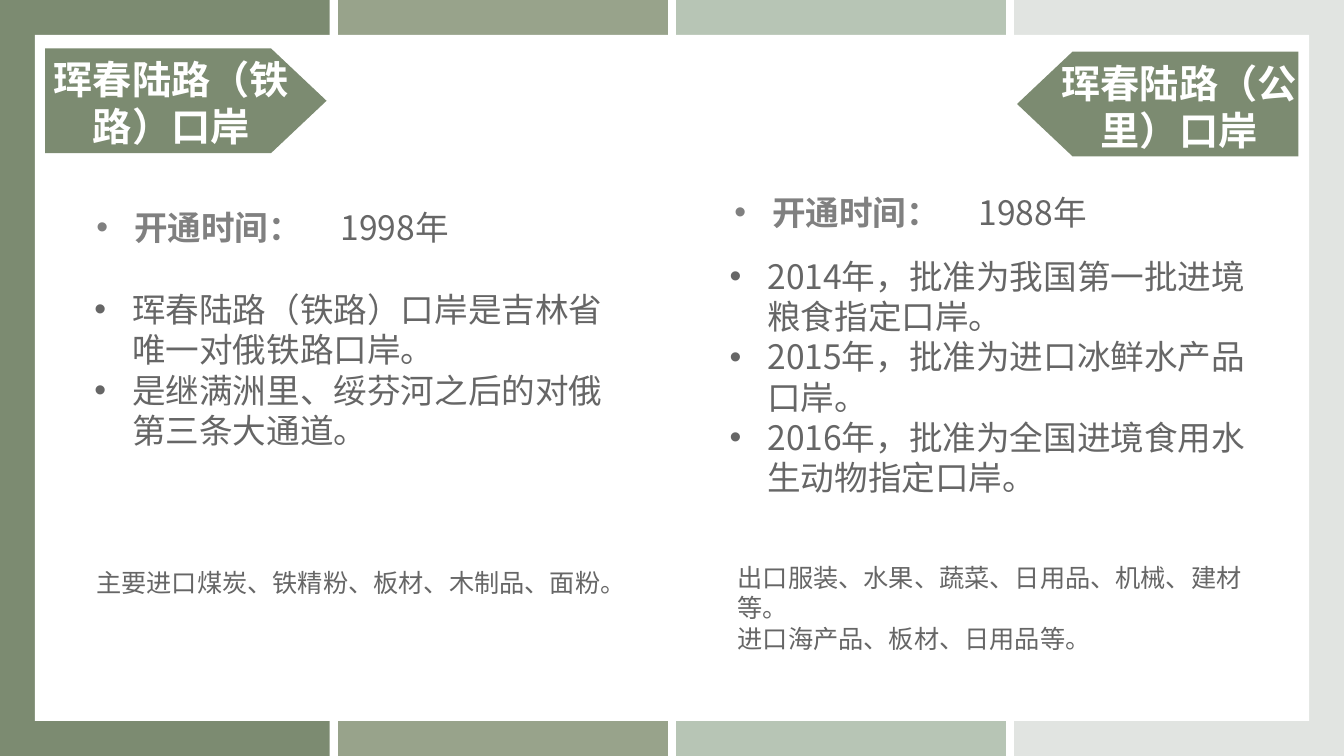
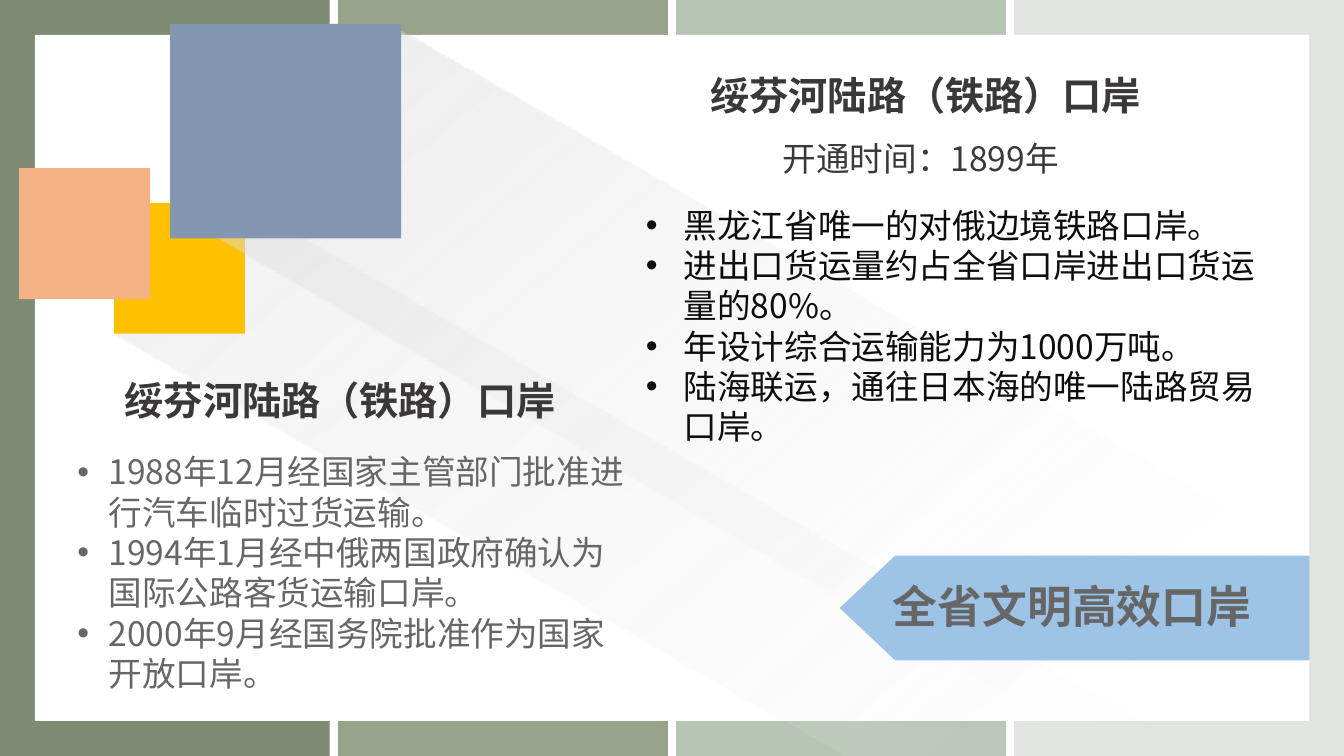
from pptx import Presentation
from pptx.dml.color import RGBColor
from pptx.enum.shapes import MSO_SHAPE
from pptx.enum.text import MSO_ANCHOR, MSO_AUTO_SIZE, PP_ALIGN
from pptx.oxml import parse_xml
from pptx.oxml.ns import nsdecls, qn
from pptx.util import Cm, Pt

RECTANGLE, PENTAGON = MSO_SHAPE.RECTANGLE, MSO_SHAPE.PENTAGON
TOP, NO_AUTOFIT = MSO_ANCHOR.TOP, MSO_AUTO_SIZE.NONE
LEFT, CENTER = PP_ALIGN.LEFT, PP_ALIGN.CENTER

# Colours
WHITE = RGBColor(0xFF, 0xFF, 0xFF)
MOSS = RGBColor(0x7C, 0x8B, 0x71)
SAGE = RGBColor(0x98, 0xA3, 0x8B)
MINT = RGBColor(0xB7, 0xC5, 0xB5)
MIST = RGBColor(0xE1, 0xE4, 0xE1)
BODY_GREY = RGBColor(0x66, 0x66, 0x66)
LABEL_GREY = RGBColor(0x80, 0x80, 0x80)
CHARCOAL = RGBColor(0x3B, 0x38, 0x38)
INK = RGBColor(0x0D, 0x0D, 0x0D)
AMBER = RGBColor(0xFF, 0xC0, 0x00)
SLATE = RGBColor(0x84, 0x97, 0xB0)
PEACH = RGBColor(0xF4, 0xB1, 0x83)
SKY = RGBColor(0x9D, 0xC3, 0xE6)

FONT, LABEL_FONT = "Noto Sans CJK SC", "Arial"
SLIDE_W, SLIDE_H = 33.87, 19.05
TITLE_ONLY = 5


def format_run(run, size=24, color=BODY_GREY, bold=False, font=FONT):
    run.font.size, run.font.bold, run.font.name = Pt(size), bold, font
    run.font.color.rgb = color
    east_asian = parse_xml(f'<a:ea {nsdecls("a")} typeface="{FONT}"/>')
    run.font._element.find(qn("a:latin")).addnext(east_asian)


def write(frame, text, align=LEFT, indent=0, tab=0, label="", **style):
    """Fill a text frame, one paragraph a line; an indent (cm) adds bullets."""
    frame.word_wrap, frame.auto_size = True, NO_AUTOFIT
    frame.vertical_anchor = TOP
    for number, line in enumerate(text.split("\n")):
        paragraph = frame.add_paragraph() if number else frame.paragraphs[0]
        paragraph.alignment = align
        props = paragraph._p.get_or_add_pPr()
        if indent:
            props.set("marL", str(Cm(indent)))
            props.set("indent", str(-Cm(indent)))
            props.append(parse_xml(f'<a:buFont {nsdecls("a")} typeface="Arial"/>'))
            props.append(parse_xml(f'<a:buChar {nsdecls("a")} char="•"/>'))
        if tab:
            props.append(parse_xml(
                f'<a:tabLst {nsdecls("a")}><a:tab pos="{Cm(tab)}" algn="l"/></a:tabLst>'))
        if label:
            run = paragraph.add_run()
            run.text = label + "\t"
            format_run(run, color=LABEL_GREY, bold=True, font=LABEL_FONT)
        run = paragraph.add_run()
        run.text = line
        format_run(run, **style)


class Deck:
    """Holds the presentation, its shared frame and the current slide."""

    def __init__(self):
        self.prs = Presentation()
        self.prs.slide_width, self.prs.slide_height = Cm(SLIDE_W), Cm(SLIDE_H)
        self.layout = self.prs.slide_layouts[TITLE_ONLY]
        self.slide = None

    def new_slide(self):
        self.slide = self.prs.slides.add_slide(self.layout)

    def block(self, left, top, width, height, color, kind=RECTANGLE):
        shape = self.slide.shapes.add_shape(
            kind, Cm(left), Cm(top), Cm(width), Cm(height))
        shape.shadow.inherit = False
        shape.fill.solid()
        shape.fill.fore_color.rgb = color
        shape.line.fill.background()
        return shape

    def pointer(self, left, top, width, color, rotation=0):
        shape = self.block(left, top, width, 2.64, color, PENTAGON)
        shape.adjustments[0] = 0.53
        shape.rotation = rotation

    def frame(self):
        """Draw the bands and the white panel, then move them to the layout."""
        band, margin = 8.31, 0.88
        colors = (MOSS, SAGE, MINT, MIST)
        pitch = (SLIDE_W - band) / (len(colors) - 1)
        parts = [self.block(i * pitch, 0, band, SLIDE_H, color)
                 for i, color in enumerate(colors)]
        parts.append(self.block(margin, margin, SLIDE_W - 2 * margin,
                                SLIDE_H - 2 * margin, WHITE))
        for i, part in enumerate(parts):
            part.element.nvSpPr.cNvPr.set("id", str(100 + i))
            self.layout.shapes.element.insert(2 + i, part.element)

    def beam(self, left, top, width, height, slant, opacity):
        """Long shadow: a slanted strip, turned and fading out."""
        right, bottom = left + width, top + height
        corners = [(left, bottom), (left + slant, top), (right, top), (right, bottom)]
        points = [(Cm(x), Cm(y)) for x, y in corners]
        builder = self.slide.shapes.build_freeform(*points[0])
        builder.add_line_segments(points[1:], close=True)
        shape = builder.convert_to_shape()
        shape.shadow.inherit = False
        shape.rotation = 30
        shape.line.fill.background()
        shape.fill.background()
        stops = "".join(
            f'<a:gs pos="{pos * 1000}"><a:srgbClr val="{color}">'
            f'<a:alpha val="{alpha * 1000}"/></a:srgbClr></a:gs>'
            for pos, color, alpha in ((0, "D9D9D9", opacity), (85, "F2F2F2", 0),
                                      (100, "FFFFFF", 0)))
        fade = parse_xml(
            f'<a:gradFill {nsdecls("a")} rotWithShape="1"><a:gsLst>{stops}</a:gsLst>'
            f'<a:lin ang="{20 * 60000}" scaled="0"/></a:gradFill>')
        props = shape.element.spPr
        props.replace(props.find(qn("a:noFill")), fade)

    def text(self, left, top, width, height, text, **style):
        box = self.slide.shapes.add_textbox(
            Cm(left), Cm(top), Cm(width), Cm(height))
        write(box.text_frame, text, **style)

    def title(self, left, top, width, height, text, **style):
        title = self.slide.shapes.title
        title.left, title.top = Cm(left), Cm(top)
        title.width, title.height = Cm(width), Cm(height)
        write(title.text_frame, text, **style)
        self.slide.shapes.element.append(title.element)  # bring to front


def hunchun(deck):
    heading = dict(align=CENTER, size=28, color=WHITE, bold=True)
    bullet = 0.95
    opened = dict(label="开通时间：", indent=bullet, tab=6.15)

    # Headings
    deck.pointer(25.63, 1.3, 7.09, MOSS, rotation=180)
    deck.pointer(1.14, 1.22, 7.09, MOSS)
    deck.title(0.76, 1.27, 7.11, 2.64, "珲春陆路（铁路）口岸", **heading)
    deck.text(26.16, 1.37, 7.11, 2.64, "珲春陆路（公里）口岸", **heading)

    # Railway port
    deck.text(2.18, 5.08, 13.54, 2.49, "1998年", **opened)
    deck.text(2.13, 7.16, 13.54, 4.37,
              "珲春陆路（铁路）口岸是吉林省唯一对俄铁路口岸。\n"
              "是继满洲里、绥芬河之后的对俄第三条大通道。", indent=bullet)
    deck.text(2.18, 14.17, 13.54, 1.02,
              "主要进口煤炭、铁精粉、板材、木制品、面粉。", size=18)

    # Road port
    deck.text(18.26, 4.7, 13.54, 2.49, "1988年", **opened)
    deck.text(18.14, 6.32, 13.54, 6.4,
              "2014年，批准为我国第一批进境粮食指定口岸。\n"
              "2015年，批准为进口冰鲜水产品口岸。\n"
              "2016年，批准为全国进境食用水生动物指定口岸。", indent=bullet)
    deck.text(18.34, 14.05, 13.46, 2.57,
              "出口服装、水果、蔬菜、日用品、机械、建材等。\n"
              "进口海产品、板材、日用品等。", size=18)


def suifenhe(deck):
    port = "绥芬河陆路（铁路）口岸"
    heading = dict(align=CENTER, size=28, color=CHARCOAL, bold=True)

    # Squares and their long shadows
    deck.beam(1.7, 12.93, 34.65, 4.47, slant=1.17, opacity=40)
    deck.block(2.87, 5.11, 3.3, 3.3, AMBER)
    deck.beam(4.04, 6.2, 29.08, 6.83, slant=2.67, opacity=60)
    deck.block(4.29, 0.6, 5.82, 5.41, SLATE)
    deck.block(0.48, 4.24, 3.3, 3.3, PEACH)

    # Right column
    deck.title(17.35, 1.68, 11.96, 1.45, port, **heading)
    deck.text(14.38, 3.35, 17.65, 1.27, "开通时间：1899年",
              align=CENTER, color=CHARCOAL)
    deck.text(16.03, 5.03, 16.56, 9.5,
              "黑龙江省唯一的对俄边境铁路口岸。\n"
              "进出口货运量约占全省口岸进出口货运量的80%。\n"
              "年设计综合运输能力为1000万吨。\n"
              "陆海联运，通往日本海的唯一陆路贸易口岸。", indent=0.95, color=INK)
    deck.pointer(21.16, 14, 11.84, SKY, rotation=180)
    deck.text(22.25, 14.45, 10.19, 1.63, "全省文明高效口岸", size=32, bold=True)

    # Left column
    deck.text(2.64, 9.37, 11.86, 1.45, port, **heading)
    deck.text(1.7, 11.25, 14.33, 6.4,
              "1988年12月经国家主管部门批准进行汽车临时过货运输。\n"
              "1994年1月经中俄两国政府确认为国际公路客货运输口岸。\n"
              "2000年9月经国务院批准作为国家开放口岸。", indent=0.79)


def main():
    deck = Deck()
    deck.new_slide()
    deck.frame()
    hunchun(deck)
    deck.new_slide()
    suifenhe(deck)
    deck.prs.save("out.pptx")


if __name__ == "__main__":
    main()
